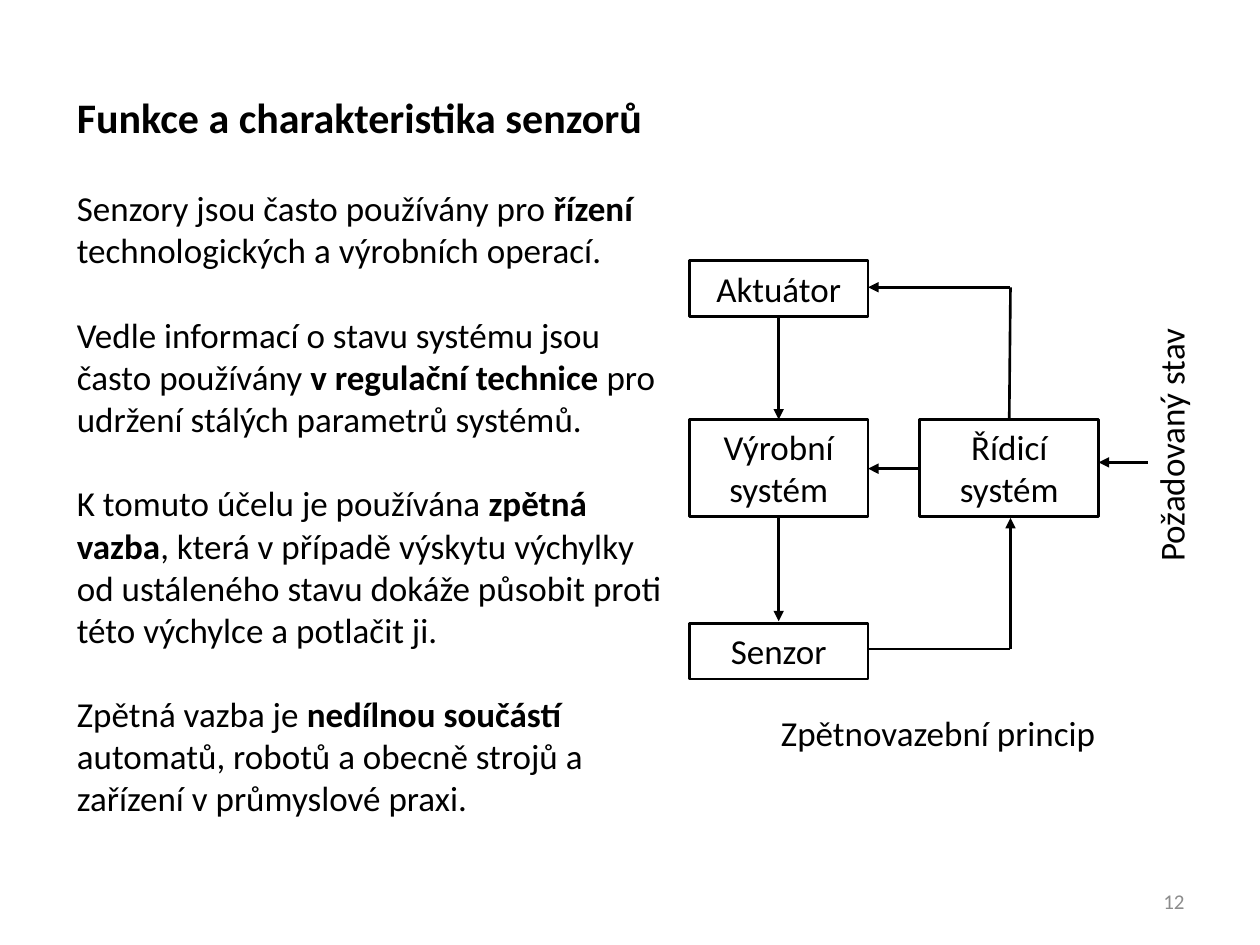
from dataclasses import dataclass

from lxml.etree import SubElement
from pptx import Presentation
from pptx.dml.color import RGBColor
from pptx.enum.shapes import MSO_CONNECTOR, MSO_SHAPE
from pptx.enum.text import MSO_ANCHOR, MSO_AUTO_SIZE, PP_ALIGN
from pptx.oxml.ns import qn
from pptx.util import Inches, Pt


@dataclass(frozen=True)
class Theme:
    face: str = "Calibri"
    ink: RGBColor = RGBColor(0, 0, 0)
    gray: RGBColor = RGBColor(0x8C, 0x8C, 0x8C)
    head: int = 24
    body: int = 20
    small: int = 12
    line: float = 1.5
    gap: float = 24.4


THEME = Theme()

BODY = [
    ("Senzory jsou často používány pro ", "řízení ",
     "technologických a výrobních operací."),
    ("Vedle informací o stavu systému jsou často používány ",
     "v regulační technice ", "pro udržení stálých parametrů systémů."),
    ("K tomuto účelu je používána ", "zpětná vazba",
     ", která v případě výskytu výchylky od ustáleného stavu dokáže "
     "působit proti této výchylce a potlačit ji."),
    ("Zpětná vazba je ", "nedílnou součástí ",
     "automatů, robotů a obecně strojů a zařízení v průmyslové praxi."),
]

LEFT, RIGHT, WIDE = 5.47, 7.3, 1.42
LOW, TALL = 0.44, 0.77
TOP, MID, BASE = 2.07, 3.33, 4.95
EDGE = LEFT + WIDE
AXIS = LEFT + WIDE / 2
LOOP = 8.02

BOXES = [
    ("Výrobní systém", LEFT, MID, TALL),
    ("Aktuátor", LEFT, TOP, LOW),
    ("Senzor", LEFT, BASE, LOW),
    ("Řídicí systém", RIGHT, MID, TALL),
]

LINES = [
    ((8.01, MID), (LOOP, 2.28), False),
    ((AXIS, MID + TALL), (AXIS, 4.93), True),
    ((RIGHT, 3.72), (EDGE, 3.72), True),
    ((LOOP, 2.28), (EDGE, 2.28), True),
    ((LOOP, 5.15), (EDGE, 5.15), False),
    ((LOOP, 5.15), (LOOP, 4.11), True),
    ((AXIS, TOP + LOW), (AXIS, MID), True),
    ((9.11, 3.67), (RIGHT + WIDE, 3.67), True),
]


def style(para, size, color=THEME.ink, bold=None, align=PP_ALIGN.LEFT):
    para.alignment = align
    font = para.font
    font.name, font.size, font.bold = THEME.face, Pt(size), bold
    font.color.rgb = color


def place(shape, left, top, width, height):
    shape.left, shape.top = Inches(left), Inches(top)
    shape.width, shape.height = Inches(width), Inches(height)
    frame = shape.text_frame
    frame.word_wrap = True
    frame.auto_size = MSO_AUTO_SIZE.NONE
    frame.vertical_anchor = MSO_ANCHOR.TOP
    return frame


def add_title(slide, text):
    frame = place(slide.shapes.title, 0.51, 0.68, 8.82, 0.5)
    frame.text = text
    style(frame.paragraphs[0], THEME.head, bold=True)


def add_body(slide, items):
    frame = place(slide.placeholders[1], 0.51, 1.43, 4.88, 5.15)
    for i, parts in enumerate(items):
        para = frame.add_paragraph() if i else frame.paragraphs[0]
        props = para._p.get_or_add_pPr()
        props.set("marL", "0")
        props.set("indent", "0")
        SubElement(props, qn("a:buNone"))
        style(para, THEME.body)
        para.space_before = Pt(THEME.gap if i else 0)
        for j, part in enumerate(parts):
            run = para.add_run()
            run.text = part
            run.font.bold = j == 1


def add_box(slide, text, left, top, height):
    box = slide.shapes.add_shape(MSO_SHAPE.RECTANGLE, 0, 0, 0, 0)
    box.shadow.inherit = False
    box.fill.background()
    box.line.color.rgb = THEME.ink
    box.line.width = Pt(THEME.line)
    frame = place(box, left, top, WIDE, height)
    frame.text = text
    style(frame.paragraphs[0], THEME.body, align=PP_ALIGN.CENTER)


def add_line(slide, start, end, arrow):
    link = slide.shapes.add_connector(
        MSO_CONNECTOR.STRAIGHT, *map(Inches, start + end))
    link.line.color.rgb = THEME.ink
    link.line.width = Pt(THEME.line)
    if arrow:
        SubElement(link.line._get_or_add_ln(), qn("a:tailEnd"),
                   type="triangle")
    SubElement(link._element.spPr, qn("a:effectLst"))


def add_label(slide, text, spot, size=THEME.body, color=THEME.ink,
              align=PP_ALIGN.LEFT):
    label = slide.shapes.add_textbox(0, 0, 0, 0)
    frame = place(label, *spot)
    frame.text = text
    style(frame.paragraphs[0], size, color, align=align)
    return label


def main():
    deck = Presentation()
    deck.slide_width, deck.slide_height = Inches(10), Inches(7.5)
    slide = deck.slides.add_slide(deck.slide_layouts[1])
    add_title(slide, "Funkce a charakteristika senzorů")
    add_body(slide, BODY)
    for box in BOXES:
        add_box(slide, *box)
    for line in LINES:
        add_line(slide, *line)
    goal = add_label(slide, "Požadovaný stav", (8.19, 3.23, 2.21, LOW))
    goal.rotation = 270
    add_label(slide, "Zpětnovazební princip", (6.1, 5.6, 2.83, LOW))
    page = add_label(slide, "12", (7.17, 6.95, 2.33, 0.4), THEME.small,
                     THEME.gray, PP_ALIGN.RIGHT)
    page.text_frame.vertical_anchor = MSO_ANCHOR.MIDDLE
    deck.save("out.pptx")


if __name__ == "__main__":
    main()
